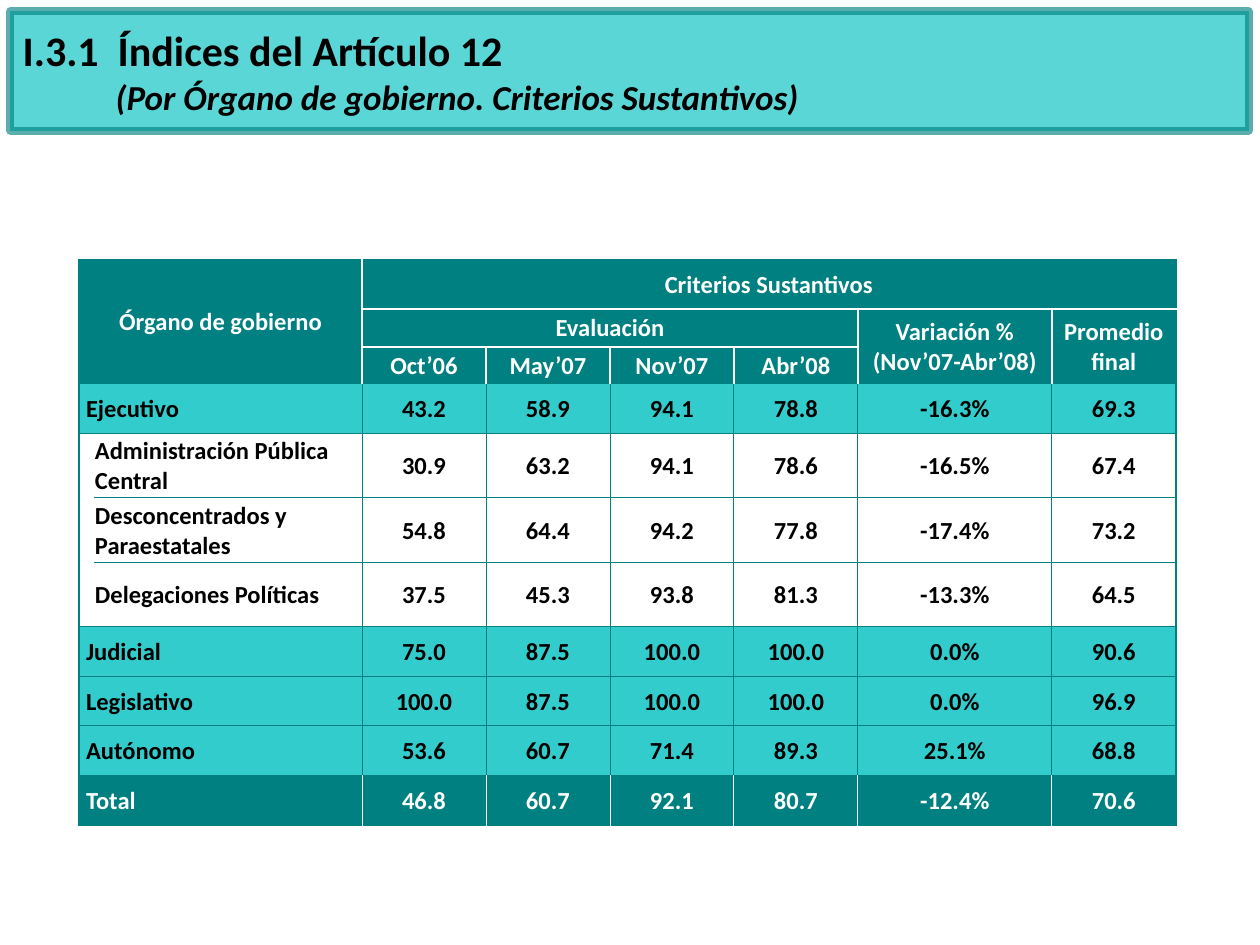
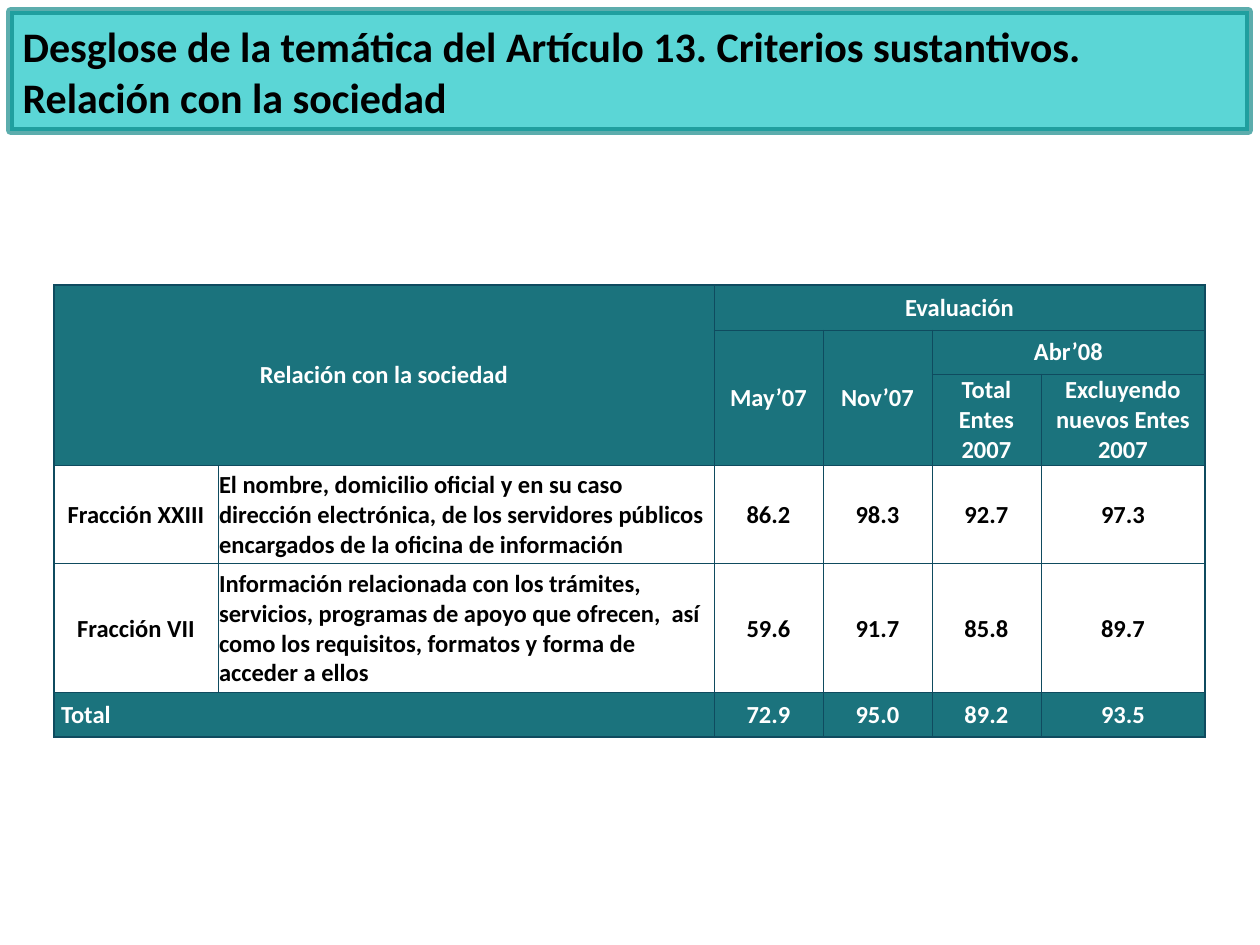
from typing import NamedTuple

from lxml import etree
from pptx import Presentation
from pptx.dml.color import RGBColor
from pptx.enum.shapes import MSO_SHAPE
from pptx.enum.text import MSO_ANCHOR, MSO_AUTO_SIZE, PP_ALIGN
from pptx.oxml.ns import qn
from pptx.util import Pt

RECTANGLE = MSO_SHAPE.RECTANGLE
MIDDLE = MSO_ANCHOR.MIDDLE
NO_AUTOFIT = MSO_AUTO_SIZE.NONE
LEFT, CENTER = PP_ALIGN.LEFT, PP_ALIGN.CENTER

EMU_PER_PX = 914400 / 126
FONT = "Calibri"
TABLE_SIZE = 14
TITLE_ONLY = 5
NO_TABLE_STYLE = "{2D5ABB26-0587-4C30-8999-92F81FD0307C}"
LABEL_INDENT = 6
COLORS = {
    "black": "000000",
    "white": "FFFFFF",
    "teal": "008080",
    "turquoise": "33CCCC",
    "petrol": "1B737D",
    "deep petrol": "0F4B5F",
}


class TitleLine(NamedTuple):
    text: str
    size: int = 24
    italic: bool = False
    indent: int = 0


class CellStyle(NamedTuple):
    """Look of a cell, with the colours of its vertical and horizontal inner lines."""
    fill: str | None
    text: str
    vertical: str
    horizontal: str
    line_width: float = 0.5


class CellBox(NamedTuple):
    """One cell or merged block; open_sides names the sides without a line."""
    row: int
    column: int
    text: str
    style: CellStyle
    rows: int = 1
    columns: int = 1
    align: PP_ALIGN = CENTER
    indent: int = 0
    open_sides: str = ""


class TableLayout(NamedTuple):
    left: int
    top: int
    widths: list[int]
    heights: list[int]
    frame: str


HEADER = CellStyle("teal", "white", "white", "white", 1)
BRANCH = CellStyle("turquoise", "black", "teal", "teal")
SUBGROUP = CellStyle(None, "black", "teal", "teal")
TOTAL = CellStyle("teal", "white", "white", "teal")
PETROL = CellStyle("petrol", "white", "deep petrol", "deep petrol")
PLAIN = CellStyle(None, "black", "deep petrol", "deep petrol")

BRANCH_TABLE = TableLayout(
    79, 260, [15, 268] + [124] * 4 + [194, 124],
    [49, 38, 37, 50, 64, 65, 64, 50, 49, 50, 50], "teal")
BRANCH_HEADERS = [
    CellBox(0, 0, "Órgano de gobierno", HEADER, 3, 2, open_sides="B"),
    CellBox(0, 2, "Criterios Sustantivos", HEADER, 1, 6),
    CellBox(1, 2, "Evaluación", HEADER, 1, 4),
    CellBox(1, 6, "Variación %\v(Nov’07-Abr’08)", HEADER, 2, open_sides="B"),
    CellBox(1, 7, "Promedio final", HEADER, 2, open_sides="B"),
] + [
    CellBox(2, column, period, HEADER, open_sides="B")
    for column, period in enumerate(["Oct’06", "May’07", "Nov’07", "Abr’08"], 2)
]
BRANCH_ROWS = [
    (BRANCH, "Ejecutivo", "43.2 58.9 94.1 78.8 -16.3% 69.3"),
    (SUBGROUP, "Administración Pública Central", "30.9 63.2 94.1 78.6 -16.5% 67.4"),
    (SUBGROUP, "Desconcentrados y Paraestatales", "54.8 64.4 94.2 77.8 -17.4% 73.2"),
    (SUBGROUP, "Delegaciones Políticas", "37.5 45.3 93.8 81.3 -13.3% 64.5"),
    (BRANCH, "Judicial", "75.0 87.5 100.0 100.0 0.0% 90.6"),
    (BRANCH, "Legislativo", "100.0 87.5 100.0 100.0 0.0% 96.9"),
    (BRANCH, "Autónomo", "53.6 60.7 71.4 89.3 25.1% 68.8"),
    (TOTAL, "Total", "46.8 60.7 92.1 80.7 -12.4% 70.6"),
]

SOCIETY_TABLE = TableLayout(
    54, 285, [164, 496, 109, 109, 109, 164], [45, 44, 91, 99, 129, 44], "deep petrol")
SOCIETY_HEADERS = [
    CellBox(0, 0, "Relación con la sociedad", PETROL, 3, 2),
    CellBox(0, 2, "Evaluación", PETROL, 1, 4),
    CellBox(1, 2, "May’07", PETROL, 2),
    CellBox(1, 3, "Nov’07", PETROL, 2),
    CellBox(1, 4, "Abr’08", PETROL, 1, 2),
    CellBox(2, 4, "Total Entes 2007", PETROL),
    CellBox(2, 5, "Excluyendo nuevos Entes 2007", PETROL),
]
SOCIETY_ROWS = [
    ("Fracción XXIII",
     "El nombre, domicilio oficial y en su caso dirección electrónica, de los "
     "servidores públicos encargados de la oficina de información",
     "86.2 98.3 92.7 97.3"),
    ("Fracción VII",
     "Información relacionada con los trámites, servicios, programas de apoyo que "
     "ofrecen,  así como los requisitos, formatos y forma de acceder a ellos",
     "59.6 91.7 85.8 89.7"),
]
SOCIETY_TOTAL = "72.9 95.0 89.2 93.5"


def px(length: int) -> int:
    return round(length * EMU_PER_PX)


def rgb(name: str) -> RGBColor:
    return RGBColor.from_string(COLORS[name])


def format_font(paragraph, size: int, color: str, italic: bool = False) -> None:
    font = paragraph.font
    font.name, font.size, font.bold = FONT, Pt(size), True
    font.italic = italic
    font.color.rgb = rgb(color)


def add_band(slide) -> None:
    """Draw the translucent title band behind the title."""
    band = slide.shapes.add_shape(RECTANGLE, px(10), px(11), px(1239), px(120))
    band.shadow.inherit = False
    band.fill.solid()
    band.fill.fore_color.rgb = rgb("turquoise")
    band.line.color.rgb = rgb("teal")
    band.line.width = Pt(4.33)
    for color, opacity in zip(band.element.xpath(".//p:spPr//a:srgbClr"), (80, 64)):
        etree.SubElement(color, qn("a:alpha"), val=str(opacity * 1000))
    slide.shapes.title.element.addprevious(band.element)


def add_titled_slide(presentation, lines: list[TitleLine]):
    slide = presentation.slides.add_slide(presentation.slide_layouts[TITLE_ONLY])
    add_band(slide)
    title = slide.shapes.title
    title.left, title.top, title.width, title.height = px(10), px(12), px(1155), px(118)
    frame = title.text_frame
    frame.text = "\n".join(line.text for line in lines)
    frame.word_wrap = True
    frame.auto_size = NO_AUTOFIT
    frame.vertical_anchor = MIDDLE
    for paragraph, line in zip(frame.paragraphs, lines):
        paragraph.alignment = LEFT
        format_font(paragraph, line.size, "black", line.italic)
    for properties, line in zip(title.element.xpath(".//a:pPr"), lines):
        properties.set("marL", str(px(line.indent)))
        properties.set("indent", "0")
    return slide


def add_borders(properties, box: CellBox, layout: TableLayout) -> None:
    style = box.style
    sides = [
        ("L", style.vertical, box.column == 0),
        ("R", style.vertical, box.column + box.columns == len(layout.widths)),
        ("T", style.horizontal, box.row == 0),
        ("B", style.horizontal, box.row + box.rows == len(layout.heights)),
    ]
    for side, color, on_frame in sides:
        width = Pt(1 if on_frame else style.line_width)
        line = etree.SubElement(properties, qn(f"a:ln{side}"), w=str(width))
        if side in box.open_sides:
            etree.SubElement(line, qn("a:noFill"))
            continue
        fill = etree.SubElement(line, qn("a:solidFill"))
        etree.SubElement(fill, qn("a:srgbClr"),
                         val=COLORS[layout.frame if on_frame else color])


def format_cell(cell, box: CellBox) -> None:
    if box.style.fill:
        cell.fill.solid()
        cell.fill.fore_color.rgb = rgb(box.style.fill)
    else:
        cell.fill.background()
    cell.margin_left = px(1 + box.indent)
    cell.margin_right = cell.margin_top = px(1)
    cell.margin_bottom = 0
    cell.vertical_anchor = MIDDLE
    cell.text = box.text
    for paragraph in cell.text_frame.paragraphs:
        paragraph.alignment = box.align
        format_font(paragraph, TABLE_SIZE, box.style.text)


def add_grid(slide, layout: TableLayout, boxes: list[CellBox]) -> None:
    frame = slide.shapes.add_table(
        len(layout.heights), len(layout.widths), px(layout.left), px(layout.top),
        px(sum(layout.widths)), px(sum(layout.heights)))
    table = frame.table
    table.first_row = table.horz_banding = False
    frame.element.xpath(".//a:tableStyleId")[0].text = NO_TABLE_STYLE
    for column, width in zip(table.columns, layout.widths):
        column.width = px(width)
    for row, height in zip(table.rows, layout.heights):
        row.height = px(height)
    cell_elements = frame.element.xpath(".//a:tc")
    for box in boxes:
        cell = table.cell(box.row, box.column)
        if box.rows * box.columns > 1:
            cell.merge(table.cell(box.row + box.rows - 1, box.column + box.columns - 1))
        element = cell_elements[box.row * len(layout.widths) + box.column]
        add_borders(element.get_or_add_tcPr(), box, layout)
        format_cell(cell, box)


def value_boxes(row: int, values: str, style: CellStyle) -> list[CellBox]:
    return [CellBox(row, column, value, style)
            for column, value in enumerate(values.split(), 2)]


def branch_boxes() -> list[CellBox]:
    boxes = list(BRANCH_HEADERS)
    subgroup_rows = [row for row, entry in enumerate(BRANCH_ROWS, 3)
                     if entry[0] is SUBGROUP]
    for row, (style, label, values) in enumerate(BRANCH_ROWS, 3):
        if style is SUBGROUP:
            open_sides = "R"
            open_sides += "T" if row != subgroup_rows[0] else ""
            open_sides += "B" if row != subgroup_rows[-1] else ""
            boxes.append(CellBox(row, 0, "", style, open_sides=open_sides))
            boxes.append(CellBox(row, 1, label, style, align=LEFT, open_sides="L"))
        else:
            boxes.append(CellBox(row, 0, label, style, columns=2, align=LEFT,
                                 indent=LABEL_INDENT))
        boxes += value_boxes(row, values, style)
    return boxes


def society_boxes() -> list[CellBox]:
    boxes = list(SOCIETY_HEADERS)
    for row, (fraction, description, values) in enumerate(SOCIETY_ROWS, 3):
        boxes.append(CellBox(row, 0, fraction, PLAIN))
        boxes.append(CellBox(row, 1, description, PLAIN, align=LEFT))
        boxes += value_boxes(row, values, PLAIN)
    total_row = len(SOCIETY_TABLE.heights) - 1
    boxes.append(CellBox(total_row, 0, "Total", PETROL, columns=2, align=LEFT,
                         indent=LABEL_INDENT))
    return boxes + value_boxes(total_row, SOCIETY_TOTAL, PETROL)


def main() -> None:
    presentation = Presentation()
    presentation.slide_width, presentation.slide_height = px(1260), px(945)

    branch_slide = add_titled_slide(presentation, [
        TitleLine("I.3.1  Índices del Artículo 12"),
        TitleLine("(Por Órgano de gobierno. Criterios Sustantivos)", 20, True, 93),
    ])
    add_grid(branch_slide, BRANCH_TABLE, branch_boxes())

    society_slide = add_titled_slide(presentation, [TitleLine(
        "Desglose de la temática del Artículo 13. Criterios sustantivos. "
        "Relación con la sociedad")])
    add_grid(society_slide, SOCIETY_TABLE, society_boxes())

    presentation.save("out.pptx")


if __name__ == "__main__":
    main()
